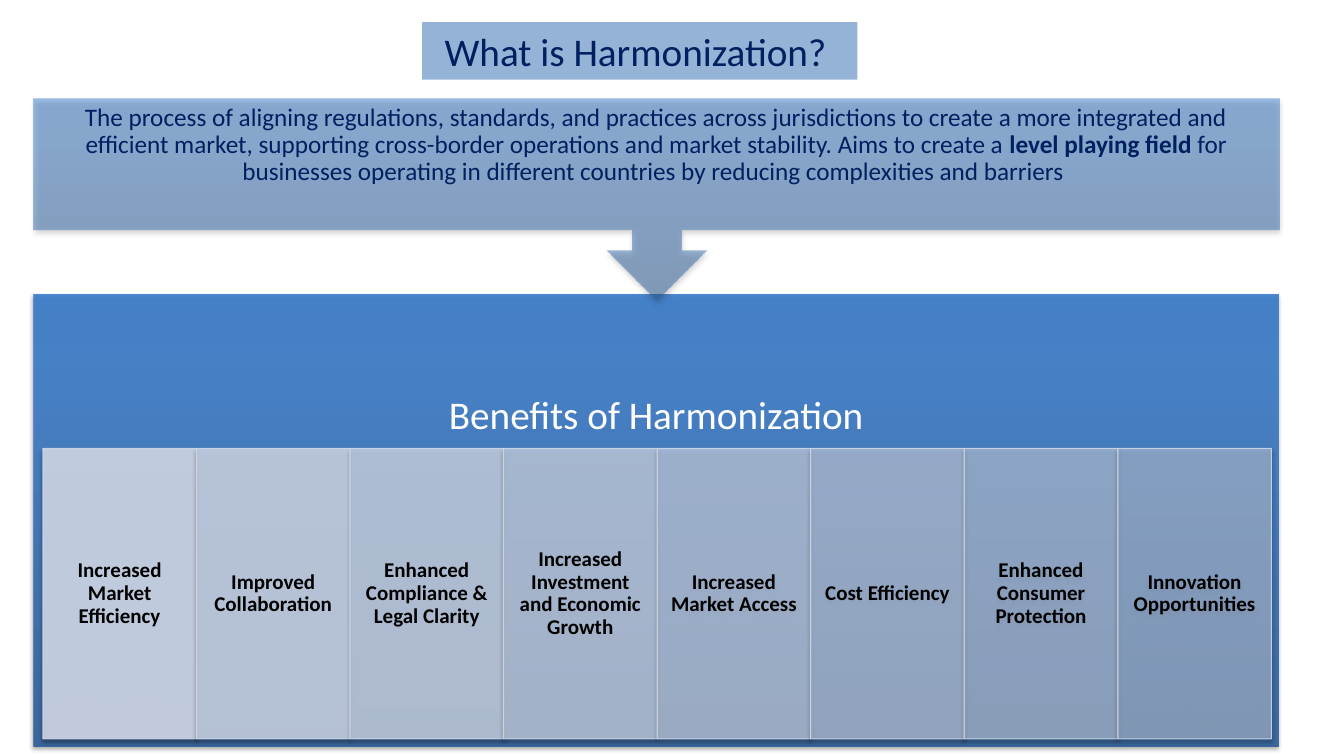
from pptx import Presentation
from pptx.dml.color import RGBColor
from pptx.enum.shapes import MSO_SHAPE as Shape
from pptx.enum.text import MSO_ANCHOR as Anchor, PP_ALIGN as Align
from pptx.oxml import parse_xml
from pptx.oxml.ns import nsdecls, qn
from pptx.util import Cm, Pt

FONT = "Calibri"
NAVY = "002060"
PALE = "D0D8E8"
EDGE = 0.84
FULL_WIDTH = 31.39
BLUE_STOPS = [(0, "2F5F99"), (80, "3D7CC7"), (100, "3A7CCB")]
DEFINITION = [
    ("The process of aligning regulations, standards, and practices across "
     "jurisdictions to create a more integrated and efficient market, "
     "supporting cross-border operations and market stability. "
     "Aims to create a ", False),
    ("level playing field", True),
    (" for businesses operating in different countries by reducing "
     "complexities and barriers ", False),
]
BENEFITS = [
    "Increased Market Efficiency",
    "Improved Collaboration",
    "Enhanced Compliance & Legal Clarity",
    "Increased Investment and Economic Growth",
    "Increased Market Access",
    "Cost Efficiency",
    "Enhanced Consumer Protection",
    "Innovation Opportunities",
]


def rgb(code):
    return RGBColor.from_string(code)


def set_alpha(properties, percent):
    for color in properties.iter(qn("a:srgbClr")):
        color.append(parse_xml(
            f'<a:alpha {nsdecls("a")} val="{round(percent * 1000)}"/>'))


def add_shadow(block):
    effects = block._element.spPr.find(qn("a:effectLst"))
    effects.append(parse_xml(
        f'<a:outerShdw {nsdecls("a")} blurRad="{Pt(3.1)}" dist="{Pt(1.8)}" '
        'dir="5400000" rotWithShape="0"><a:srgbClr val="000000">'
        '<a:alpha val="35000"/></a:srgbClr></a:outerShdw>'))


def add_block(slide, kind, left, top, width, height):
    block = slide.shapes.add_shape(
        kind, Cm(left), Cm(top), Cm(width), Cm(height))
    block.shadow.inherit = False
    block.line.fill.background()
    return block


def fill_gradient(block, alpha):
    stops = "".join(
        f'<a:gs pos="{place * 1000}"><a:srgbClr val="{color}"/></a:gs>'
        for place, color in BLUE_STOPS)
    gradient = parse_xml(
        f'<a:gradFill {nsdecls("a")} rotWithShape="0"><a:gsLst>{stops}'
        '</a:gsLst><a:lin ang="16200000" scaled="0"/></a:gradFill>')
    set_alpha(gradient, alpha)
    block.fill.background()
    properties = block._element.spPr
    properties.replace(properties.find(qn("a:noFill")), gradient)
    add_shadow(block)


def write(block, parts, size, color, insets, anchor=Anchor.MIDDLE, spacing=0.9):
    frame = block.text_frame
    frame.word_wrap = True
    frame.vertical_anchor = anchor
    (frame.margin_left, frame.margin_top,
     frame.margin_right, frame.margin_bottom) = [Cm(inset) for inset in insets]
    paragraph = frame.paragraphs[0]
    paragraph.alignment = Align.CENTER
    paragraph.line_spacing = spacing
    for words, bold in parts:
        run = paragraph.add_run()
        run.text = words
        run.font.name = FONT
        run.font.size = Pt(size)
        run.font.bold = bold
        run.font.color.rgb = rgb(color)


def add_panel(slide):
    panel = add_block(slide, Shape.RECTANGLE, EDGE, 7.42, FULL_WIDTH, 11.4)
    fill_gradient(panel, 90)
    write(panel, [("Benefits of Harmonization", False)], 28, "FFFFFF",
          (0.56, 0.56, 0.56, 5.79))


def add_benefits(slide):
    width = 3.87
    fade = 40 / (len(BENEFITS) - 1)
    for index, benefit in enumerate(BENEFITS):
        tile = add_block(slide, Shape.RECTANGLE,
                         1.08 + index * width, 11.3, width, 7.32)
        tile.fill.solid()
        tile.fill.fore_color.rgb = rgb(PALE)
        set_alpha(tile._element.spPr, 90 - index * fade)
        tile.line.color.rgb = rgb(PALE)
        tile.line.width = Pt(0.75)
        set_alpha(tile._element.spPr.find(qn("a:ln")), 90)
        add_shadow(tile)
        write(tile, [(benefit, True)], 15, "000000", (0.3, 0.05, 0.3, 0.05))


def add_definition(slide):
    callout = add_block(slide, Shape.UP_ARROW_CALLOUT,
                        EDGE, 2.49, FULL_WIDTH, 5.08)
    callout.rotation = 180
    fill_gradient(callout, 50)
    definition = slide.shapes.add_textbox(
        Cm(EDGE), Cm(2.49), Cm(FULL_WIDTH), Cm(3.3))
    write(definition, DEFINITION, 18, NAVY, (0.36, 0.15, 0.36, 0.36), Anchor.TOP)


def add_title(slide):
    title = add_block(slide, Shape.RECTANGLE, 10.64, 0.56, 10.97, 1.45)
    title.fill.solid()
    title.fill.fore_color.rgb = rgb("95B3D7")
    write(title, [("What is Harmonization? ", False)], 28, NAVY,
          (0.25, 0.13, 0.25, 0.13), Anchor.TOP, 1.0)


def main():
    deck = Presentation()
    deck.slide_width = Cm(33.87)
    deck.slide_height = Cm(19.05)
    slide = deck.slides.add_slide(deck.slide_layouts[6])
    add_panel(slide)
    add_benefits(slide)
    add_definition(slide)
    add_title(slide)
    deck.save("out.pptx")


if __name__ == "__main__":
    main()
